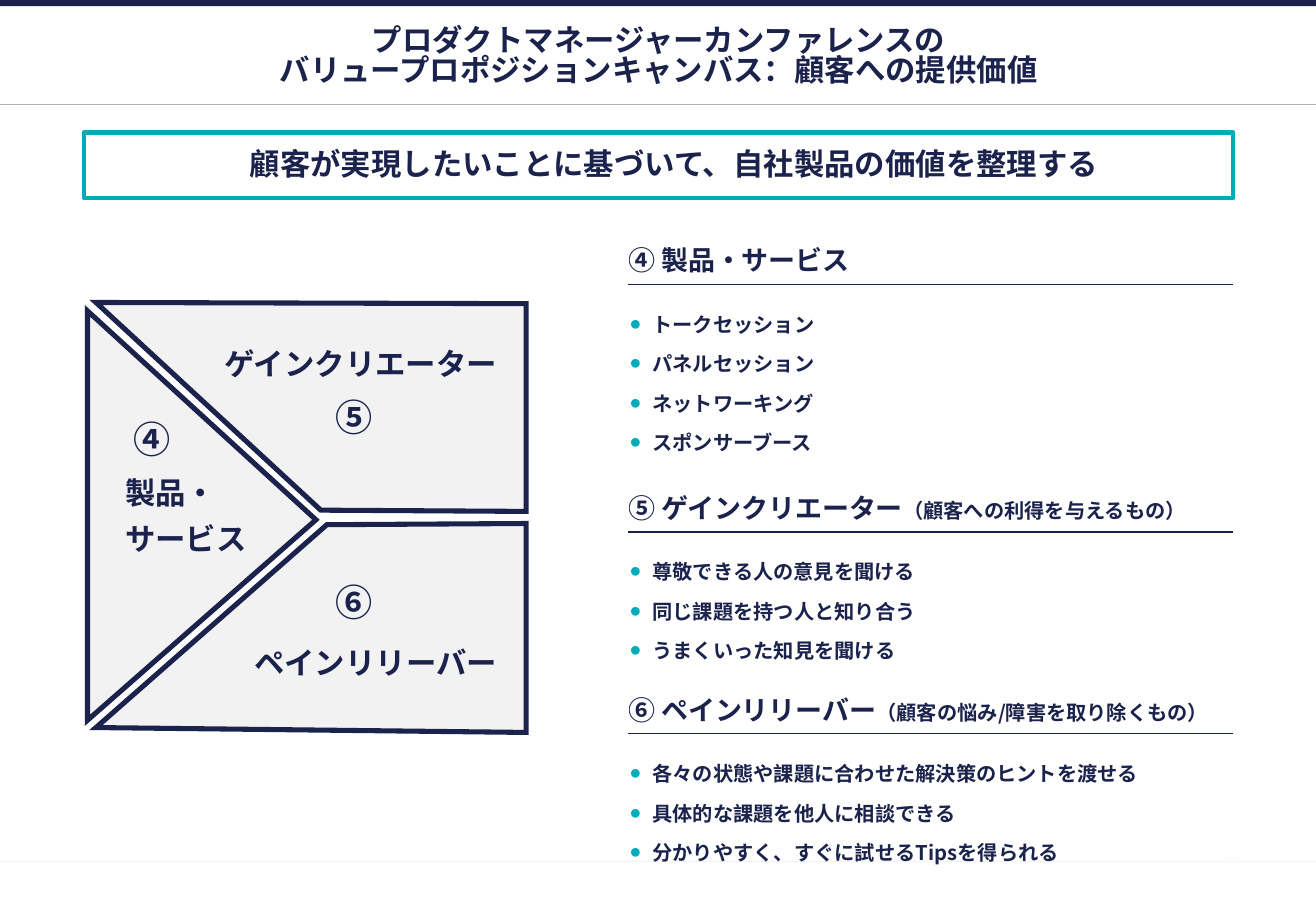
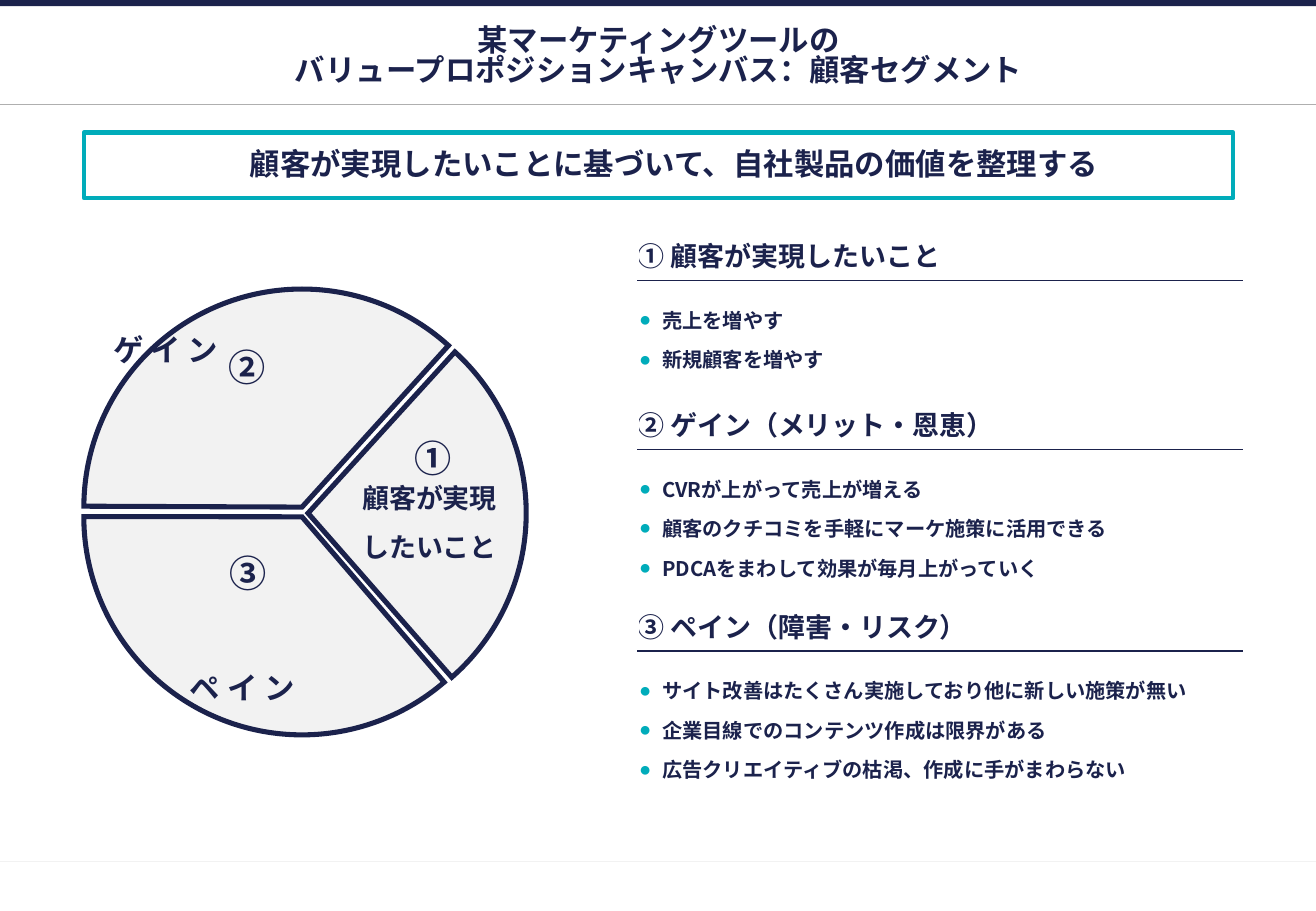
import lxml.etree
import pptx
import pptx.dml.color
import pptx.enum.shapes
import pptx.enum.text
import pptx.oxml.ns
import pptx.util

Inches = pptx.util.Inches
Pt = pptx.util.Pt
qn = pptx.oxml.ns.qn
ALIGN = pptx.enum.text.PP_ALIGN
ANCHOR = pptx.enum.text.MSO_ANCHOR
SHAPE = pptx.enum.shapes.MSO_SHAPE

FONT = "Noto Sans CJK JP"
NAVY, TEAL, WHITE, PALE, GREY = "1B224C", "00ACBA", "FFFFFF", "F2F2F2", "AFAFAF"
WIDTH, HEIGHT = 10.83, 7.5
MARGIN, CONTENT_WIDTH = 0.69, 9.46
BANNER = "顧客が実現したいことに基づいて、自社製品の価値を整理する"

PRODUCT_SECTIONS = [
    (["④ 製品・サービス"], 0.42,
     ["トークセッション", "パネルセッション", "ネットワーキング", "スポンサーブース"], 1.16),
    (["⑤ ゲインクリエーター", "（顧客への利得を与えるもの）"], 0.42,
     ["尊敬できる人の意見を聞ける", "同じ課題を持つ人と知り合う", "うまくいった知見を聞ける"], 0.96),
    (["⑥ ペインリリーバー", "（顧客の悩み/障害を取り除くもの）"], 0.57,
     ["各々の状態や課題に合わせた解決策のヒントを渡せる", "具体的な課題を他人に相談できる",
      "分かりやすく、すぐに試せるTipsを得られる"], 1.01),
]
CUSTOMER_SECTIONS = [
    (["① 顧客が実現したいこと"], 0.42, ["売上を増やす", "新規顧客を増やす"], 0.89),
    (["② ゲイン（メリット・恩恵）"], 0.42,
     ["CVRが上がって売上が増える", "顧客のクチコミを手軽にマーケ施策に活用できる",
      "PDCAをまわして効果が毎月上がっていく"], 0.96),
    (["③ ペイン（障害・リスク）"], 0.57,
     ["サイト改善はたくさん実施しており他に新しい施策が無い", "企業目線でのコンテンツ作成は限界がある",
      "広告クリエイティブの枯渇、作成に手がまわらない"], 1.59),
]


def rgb(value):
    return pptx.dml.color.RGBColor.from_string(value)


def apply(target, values):
    for name, value in values.items():
        setattr(target, name, value)


def box(left, top, width, height):
    return [Inches(value) for value in (left, top, width, height)]


def margins(left, top, right, bottom):
    names = ("margin_left", "margin_top", "margin_right", "margin_bottom")
    return dict(zip(names, box(left, top, right, bottom)))


def child(parent, tag, **attributes):
    element = lxml.etree.SubElement(parent, qn(tag))
    for name, value in attributes.items():
        element.set(name, str(value))
    return element


def style_run(run, size):
    apply(run.font, {"size": Pt(size), "bold": True, "name": FONT})
    run.font.color.rgb = rgb(NAVY)
    child(run._r.get_or_add_rPr(), "a:ea", typeface=FONT)


def write(frame, paragraphs, size=18, align=ALIGN.LEFT, later=None):
    for index, parts in enumerate(paragraphs):
        paragraph = frame.add_paragraph() if index else frame.paragraphs[0]
        apply(paragraph, {"alignment": align, **((later or {}) if index else {})})
        for text, run_size in [(parts, size)] if isinstance(parts, str) else parts:
            run = paragraph.add_run()
            run.text = text
            style_run(run, run_size)


def indent(paragraph, left, first):
    properties = paragraph._p.get_or_add_pPr()
    properties.set("marL", str(Inches(left)))
    properties.set("indent", str(Inches(first)))
    return properties


def paint(shape, fill, line=None, weight=0):
    shape.shadow.inherit = False
    shape.fill.solid()
    shape.fill.fore_color.rgb = rgb(fill)
    if line:
        shape.line.color.rgb = rgb(line)
        shape.line.width = Pt(weight)
    else:
        shape.line.fill.background()


def add_rule(shapes, top, color):
    rule = shapes.add_connector(pptx.enum.shapes.MSO_CONNECTOR.STRAIGHT,
                                0, Inches(top), Inches(WIDTH), Inches(top))
    rule.line.color.rgb = rgb(color)
    rule.line.width = Pt(0.75)
    child(rule.element.spPr, "a:effectLst")
    return rule


def set_up_master(presentation, slide):
    master = presentation.slide_master
    for defaults in master.element.xpath(".//p:titleStyle//a:defRPr"):
        defaults.set("sz", "1800")
    band = slide.shapes.add_shape(SHAPE.RECTANGLE, *box(0, 0, WIDTH, 0.05))
    paint(band, NAVY)
    parts = [add_rule(slide.shapes, 7.09, PALE), band, add_rule(slide.shapes, 0.86, GREY)]
    for part in parts:
        master.shapes.element.append(part.element)


def place(shape, left, top, width, height):
    names = ("left", "top", "width", "height")
    apply(shape, dict(zip(names, box(left, top, width, height))))


def fill_heading(slide, title_lines):
    title, banner = slide.shapes.title, slide.placeholders[1]
    place(title, MARGIN, 0.26, CONTENT_WIDTH, 0.42)
    place(banner, MARGIN, 1.09, CONTENT_WIDTH, 0.54)
    banner.fill.solid()
    banner.fill.fore_color.rgb = rgb(WHITE)
    banner.line.color.rgb = rgb(TEAL)
    banner.line.width = Pt(2.5)
    common = {"vertical_anchor": ANCHOR.MIDDLE, "word_wrap": True,
              "auto_size": pptx.enum.text.MSO_AUTO_SIZE.NONE}
    apply(title.text_frame, {**common, **margins(0.04, 0.04, 0.04, 0.04)})
    apply(banner.text_frame, {**common, **margins(0.16, 0.12, 0.16, 0.12)})

    heading = title.text_frame.paragraphs[0]
    heading.text = "\v".join(title_lines)
    apply(heading, {"alignment": ALIGN.CENTER, "line_spacing": 0.83})
    for run in heading.runs:
        style_run(run, 18)

    write(banner.text_frame, [BANNER], align=ALIGN.CENTER)
    message = banner.text_frame.paragraphs[0]
    apply(message, {"space_before": Pt(0), "line_spacing": 0.9})
    child(indent(message, 0.5, -0.25), "a:buNone")


def set_borders(cell, top, bottom):
    properties = cell._tc.get_or_add_tcPr()
    for tag, color in (("a:lnL", WHITE), ("a:lnR", WHITE), ("a:lnT", top), ("a:lnB", bottom)):
        line = child(properties, tag, w=Pt(1))
        child(child(line, "a:solidFill"), "a:srgbClr", val=color)
    cell.fill.background()


def add_bullets(frame, items):
    write(frame, items, size=12, later={"space_before": Pt(6)})
    for paragraph in frame.paragraphs:
        properties = indent(paragraph, 0.2, -0.19)
        child(child(properties, "a:buClr"), "a:srgbClr", val=TEAL)
        child(properties, "a:buFont", typeface="Arial")
        child(properties, "a:buChar", char="●")


def add_sections(slide, left, top, sections):
    height = sum(section[1] + section[3] for section in sections)
    table = slide.shapes.add_table(2 * len(sections), 1, *box(left, top, 4.97, height)).table
    apply(table, {"first_row": False, "horz_banding": False})
    for index, (heading, heading_height, items, items_height) in enumerate(sections):
        rows = 2 * index, 2 * index + 1
        for row, row_height in zip(rows, (heading_height, items_height)):
            table.rows[row].height = Inches(row_height)
        heading_cell, items_cell = [table.cell(row, 0) for row in rows]
        apply(heading_cell, {"vertical_anchor": ANCHOR.BOTTOM, **margins(0, 0.05, 0, 0.05)})
        apply(items_cell, {"vertical_anchor": ANCHOR.TOP,
                           **margins(0, 0.2, 0, 0 if index else 0.2)})
        set_borders(heading_cell, WHITE, NAVY)
        set_borders(items_cell, NAVY, WHITE)
        write(heading_cell.text_frame, [list(zip(heading, (16, 12)))])
        add_bullets(items_cell.text_frame, items)


def add_label(shapes, bounds, lines, size=22, later=None):
    frame = shapes.add_textbox(*box(*bounds)).text_frame
    apply(frame, {"word_wrap": True, "vertical_anchor": ANCHOR.MIDDLE, **margins(0, 0, 0, 0)})
    write(frame, lines, size, ALIGN.CENTER, later)


def finish_part(shape, lines, anchor, insets, align, later=None):
    paint(shape, PALE, NAVY, 3)
    child(shape.element.spPr.find(qn("a:ln")), "a:miter", lim=800000)
    apply(shape.text_frame, {"vertical_anchor": anchor, "word_wrap": True, **margins(*insets)})
    write(shape.text_frame, lines, align=align, later=later)


def add_value_map(slide, left, top):
    shapes = slide.shapes.add_group_shape().shapes
    parts = [
        ([(1.92, 1.71), (0.07, 0), (3.61, 0.01), (3.61, 1.72)], ["ゲインクリエーター"],
         ANCHOR.TOP, (0, 0.35, 0.24, 0), ALIGN.RIGHT),
        ([(0.07, 3.5), (1.97, 1.83), (3.61, 1.82), (3.61, 3.54)], ["ペインリリーバー"],
         ANCHOR.BOTTOM, (0, 0.12, 0.24, 0.43), ALIGN.RIGHT),
        ([(0, 0.07), (0, 3.44), (1.88, 1.79)], ["製品・", "サービス"],
         ANCHOR.MIDDLE, (0.31, 0, 0, 0), ALIGN.LEFT),
    ]
    for offsets, lines, anchor, insets, align in parts:
        points = [(Inches(left + x), Inches(top + y)) for x, y in offsets]
        builder = shapes.build_freeform(*points[0])
        builder.add_line_segments(points[1:], close=True)
        finish_part(builder.convert_to_shape(), lines, anchor, insets, align,
                    {"space_before": Pt(6)})
    for number, x, y in (("④", 0.28, 0.92), ("⑤", 1.94, 0.74), ("⑥", 1.94, 2.26)):
        add_label(shapes, (left + x, top + y, 0.5, 0.4), [number])


def add_customer_circle(slide, left, top):
    shapes = slide.shapes.add_group_shape().shapes
    sectors = [
        (0, 0.08, (29.59, 108.04), ["ペ イ ン"], ANCHOR.BOTTOM, (0, 0, 0.98, 0.24), ALIGN.CENTER),
        (0.05, 0.05, (187.38, 29.28), [], ANCHOR.MIDDLE, (0, 0, 0, 0), ALIGN.CENTER),
        (0, 0, (108.14, 187.31), ["ゲ イ ン"], ANCHOR.TOP, (0.24, 0.35, 0, 0), ALIGN.LEFT),
    ]
    for x, y, angles, lines, anchor, insets, align in sectors:
        sector = shapes.add_shape(SHAPE.PIE, *box(left + x, top + y, 3.59, 3.59))
        for index, angle in enumerate(angles):
            sector.adjustments[index] = angle
        finish_part(sector, lines, anchor, insets, align)
    add_label(shapes, (left + 2.21, top + 1.61, 1.27, 0.62), ["顧客が実現", "したいこと"], 16,
              {"line_spacing": 1.5})
    for number, x, y in (("①", 2.24, 1.2), ("②", 0.71, 0.45), ("③", 0.72, 2.15)):
        add_label(shapes, (left + x, top + y, 1.27, 0.37), [number])


def main():
    presentation = pptx.Presentation()
    apply(presentation, {"slide_width": Inches(WIDTH), "slide_height": Inches(HEIGHT)})
    layout = presentation.slide_layouts[1]

    product_slide = presentation.slides.add_slide(layout)
    set_up_master(presentation, product_slide)
    fill_heading(product_slide, ["プロダクトマネージャーカンファレンスの",
                                 "バリュープロポジションキャンバス：顧客への提供価値"])
    add_sections(product_slide, 5.17, 1.92, PRODUCT_SECTIONS)
    add_value_map(product_slide, 0.72, 2.49)

    customer_slide = presentation.slides.add_slide(layout)
    fill_heading(customer_slide, ["某マーケティングツールの",
                                  "バリュープロポジションキャンバス：顧客セグメント"])
    add_sections(customer_slide, 5.25, 1.89, CUSTOMER_SECTIONS)
    add_customer_circle(customer_slide, MARGIN, 2.38)

    presentation.save("out.pptx")


if __name__ == "__main__":
    main()
